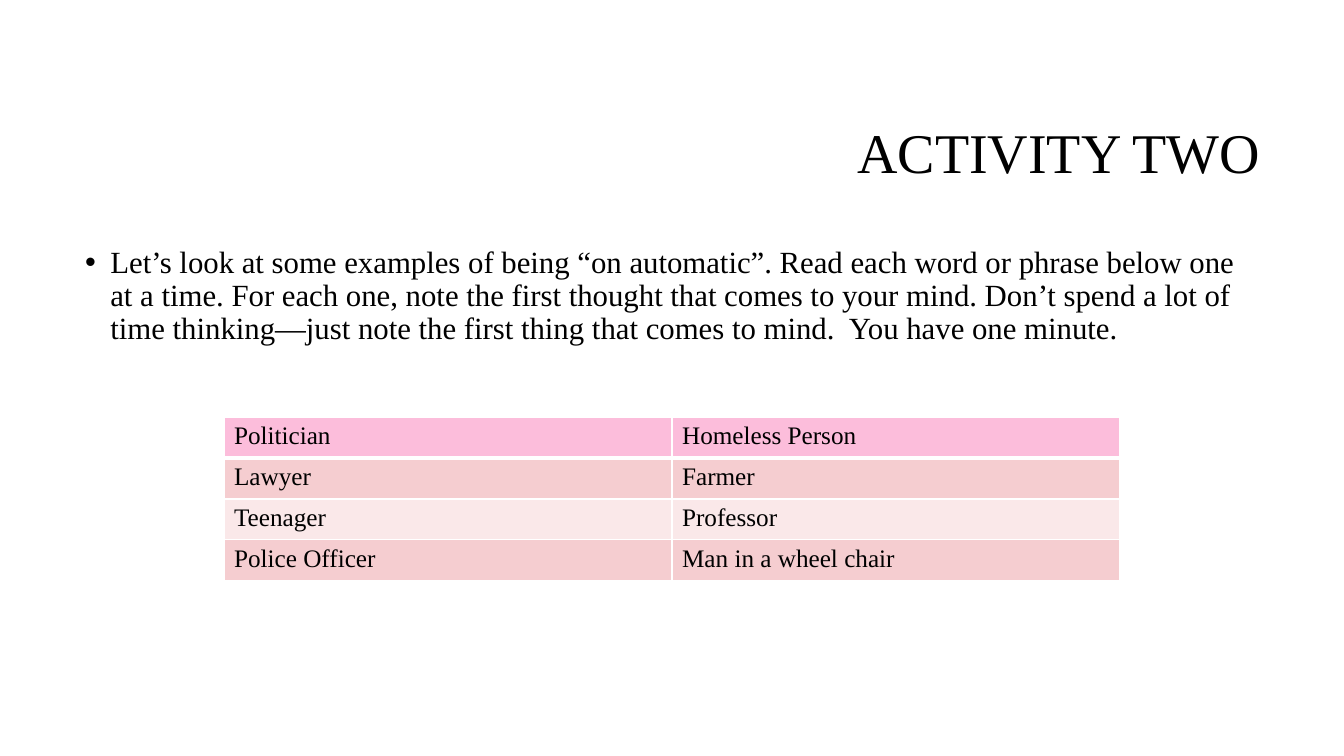
from lxml.etree import SubElement as Sub
from pptx import Presentation
from pptx.dml.color import RGBColor as RGB
from pptx.enum.text import MSO_ANCHOR as Anchor, MSO_AUTO_SIZE as Fit, PP_ALIGN as Align
from pptx.oxml.ns import qn
from pptx.util import Inches, Pt

WIDE, HIGH = Inches(13.33), Inches(7.5)
FONT = "Times New Roman"
BLACK = RGB(0x00, 0x00, 0x00)
WHITE = RGB(0xFF, 0xFF, 0xFF)
PINK = RGB(0xFC, 0xBD, 0xDB)
ROSE = RGB(0xF5, 0xCD, 0xD0)
BLUSH = RGB(0xFA, 0xE8, 0xE9)

TASK = (
    "Let’s look at some examples of being “on automatic”. Read each word or "
    "phrase below one at a time. For each one, note the first thought that "
    "comes to your mind. Don’t spend a lot of time thinking—just note the "
    "first thing that comes to mind.  You have one minute."
)
WORDS = [
    ("Politician", "Homeless Person"),
    ("Lawyer", "Farmer"),
    ("Teenager", "Professor"),
    ("Police Officer", "Man in a wheel chair"),
]


def area(left, top, width, height):
    """Turn shares of the slide into lengths."""
    return int(left * WIDE), int(top * HIGH), int(width * WIDE), int(height * HIGH)


def write(frame, text, size=18, align=Align.LEFT, anchor=Anchor.TOP,
          line=1.0, bullet=False):
    frame.word_wrap = True
    frame.vertical_anchor = anchor
    para = frame.paragraphs[0]
    para.text = text
    para.alignment = align
    para.line_spacing = line
    para.space_before = Pt(0)
    if bullet:
        props = para._p.get_or_add_pPr()
        props.set("marL", str(Inches(0.25)))
        props.set("indent", str(Inches(-0.25)))
        Sub(props, qn("a:buFont"), typeface="Arial")
        Sub(props, qn("a:buChar"), char="•")
    font = para.runs[0].font
    font.name, font.size, font.bold = FONT, Pt(size), False
    font.color.rgb = BLACK


def add_title(slide, text, box):
    title = slide.shapes.title
    title.left, title.top, title.width, title.height = box
    write(title.text_frame, text, size=40, align=Align.RIGHT,
          anchor=Anchor.MIDDLE, line=0.9)
    title.text_frame.auto_size = Fit.NONE


def add_body(slide, text, box):
    body = slide.shapes.add_textbox(*box)
    write(body.text_frame, text, size=22, line=0.9, bullet=True)


def edge(cell, base):
    """Draw the four borders, the bottom one at its own width."""
    props = cell._tc.get_or_add_tcPr()
    for side, width in zip("LRTB", (1, 1, 1, base)):
        rule = Sub(props, qn(f"a:ln{side}"), w=str(Pt(width)))
        fill = Sub(rule, qn("a:solidFill"))
        Sub(fill, qn("a:srgbClr"), val=str(WHITE))


def add_grid(slide, rows, box):
    grid = slide.shapes.add_table(len(rows), len(rows[0]), *box).table
    grid.first_row = grid.horz_banding = False
    for r, row in enumerate(rows):
        shade = PINK if r == 0 else ROSE if r % 2 else BLUSH
        for c, word in enumerate(row):
            cell = grid.cell(r, c)
            edge(cell, 1 if r else 3)
            cell.fill.solid()
            cell.fill.fore_color.rgb = shade
            write(cell.text_frame, word)


def main():
    deck = Presentation()
    deck.slide_width, deck.slide_height = WIDE, HIGH
    slide = deck.slides.add_slide(deck.slide_layouts[5])

    # Heading and task
    add_title(slide, "ACTIVITY TWO", area(0.238, 0.112, 0.707, 0.188))
    add_body(slide, TASK, area(0.056, 0.32, 0.888, 0.587))

    # Word list
    add_grid(slide, WORDS, area(1 / 6, 0.552, 2 / 3, 0.216))

    deck.save("out.pptx")


if __name__ == "__main__":
    main()
